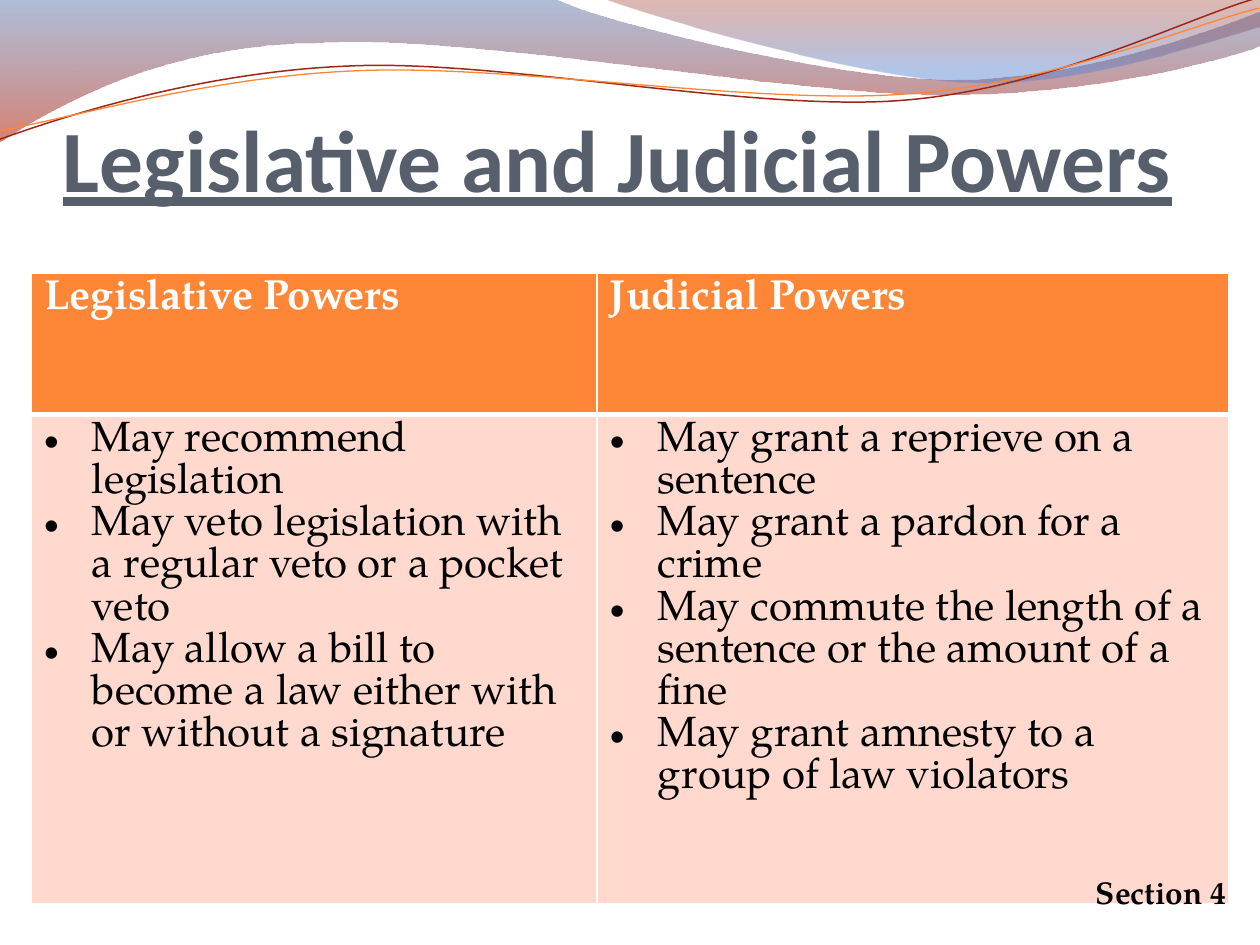
from lxml import etree
from pptx import Presentation
from pptx import util as u
from pptx.dml.color import RGBColor
from pptx.enum import text
from pptx.oxml import ns

SERIF = "TeX Gyre Pagella"

deck = Presentation()
deck.slide_width, deck.slide_height = u.Inches(10), u.Inches(7.5)
wide, high = deck.slide_width, deck.slide_height
slide = deck.slides.add_slide(deck.slide_layouts[6])
rgb = RGBColor.from_string


def style(para, size, color, face=SERIF, bold=True):
    for run in para.runs:
        font = run.font
        font.size, font.name, font.bold = u.Pt(size), face, bold
        font.color.rgb = rgb(color)


def trace(start, parts, close):
    """Draw a freeform in inches; a part of one point is a line, of three a cubic curve."""
    pen = slide.shapes.build_freeform(u.Inches(start[0]), u.Inches(start[1]), scale=1.0)
    dots = [(u.Inches(x), u.Inches(y)) for part in parts for x, y in part]
    pen.add_line_segments(dots, close=close)
    shape = pen.convert_to_shape()
    shape.shadow.inherit = False
    lines = iter(list(shape._element.iter(ns.qn("a:lnTo"))))
    for part in parts:
        group = [next(lines) for dot in part]
        if len(group) == 3:
            curve = etree.Element(ns.qn("a:cubicBezTo"))
            group[0].addprevious(curve)
            for line in group:
                curve.append(line[0])
                line.getparent().remove(line)
    return shape


# Waves across the top: start, parts, then stops as (position, colour, opacity in %)
waves = [
    ((0, -0.01), [
        [(4.4, -0.01)],
        [(4.76, 0.17), (6.64, 0.63), (7.58, 0.63)],
        [(8.53, 0.63), (9.58, 0.26), (10, 0.09)],
        [(10.01, 0.36)],
        [(9.83, 0.44), (8.7, 0.76), (7.46, 0.75)],
        [(6.22, 0.75), (3.82, 0.28), (2.57, 0.34)],
        [(1.29, 0.35), (0.46, 0.83), (-0.01, 1.13)],
    ], [(0, "4F6EA8", 45), (1, "B61A00", 55)]),
    ((4.79, -0.01), [
        [(5.09, 0.11), (6.82, 0.62), (7.69, 0.65)],
        [(8.56, 0.69), (9.61, 0.32), (10, 0.21)],
        [(10, 0)],
    ], [(0, "951500", 30), (0.8, "5681D1", 45)]),
]
for start, parts, stops in waves:
    wave = trace(start, parts, True)
    wave.line.fill.background()
    wave.fill.gradient()
    wave.fill.gradient_angle = 270
    for stop, (place, color, alpha) in zip(wave.fill.gradient_stops, stops):
        stop.position = place
        stop.color.rgb = rgb(color)
    tones = wave.fill._xPr.iter(ns.qn("a:srgbClr"))
    for tone, (place, color, alpha) in zip(tones, stops):
        etree.SubElement(tone, ns.qn("a:alpha"), val=str(alpha * 1000))

# Thin threads, tilted as a whole
threads = [
    ((-0.02, 0.87), [
        [(0.47, 0.72), (1.58, 0.41), (2.78, 0.42)],
        [(3.96, 0.42), (5.92, 0.93), (7.12, 0.9)],
        [(8.32, 0.87), (9.4, 0.36), (10, 0.22)],
    ], "9E2713", 0.85),
    ((-0.02, 0.8), [
        [(0.46, 0.75), (1.64, 0.45), (2.83, 0.46)],
        [(4.03, 0.46), (5.96, 0.88), (7.16, 0.85)],
        [(8.35, 0.83), (9.42, 0.42), (10.01, 0.3)],
    ], "FE8637", 0.75),
]
for start, parts, color, width in threads:
    thread = trace(start, parts, False)
    thread.rotation = 357.3
    thread.fill.background()
    thread.line.color.rgb = rgb(color)
    thread.line.width = u.Pt(width)

# Title
title = slide.shapes.add_textbox(wide // 20, u.Inches(0.77), wide * 9 // 10, u.Inches(0.9))
frame = title.text_frame
frame.word_wrap = True
frame.vertical_anchor = text.MSO_ANCHOR.BOTTOM
frame.margin_left = frame.margin_right = frame.margin_bottom = 0
frame.text = "Legislative and Judicial Powers"
style(frame.paragraphs[0], 50, "575F6D", "Calibri")
frame.paragraphs[0].runs[0].font.underline = True

# Table of powers
powers = {
    "Legislative Powers": [
        "May recommend legislation",
        "May veto legislation with a regular veto or a pocket veto",
        "May allow a bill to become a law either with or without a signature",
    ],
    "Judicial Powers": [
        "May grant a reprieve on a sentence",
        "May grant a pardon for a crime",
        "May commute the length of a sentence or the amount of a fine",
        "May grant amnesty to a group of law violators",
    ],
}
table = slide.shapes.add_table(2, 2, wide // 40, u.Inches(2.17),
                               wide * 19 // 20, high * 2 // 3).table
table.horz_banding = False
for row, size in zip(table.rows, (1.12, 3.88)):
    row.height = u.Inches(size)
for col, size in zip(table.columns, (4.49, 5.01)):
    col.width = u.Inches(size)

for col, (name, items) in enumerate(powers.items()):
    head, body = table.cell(0, col), table.cell(1, col)
    for cell, color, thick in ((head, "FE8637", "lnB"), (body, "FFD9CE", "lnT")):
        props = cell._tc.get_or_add_tcPr()
        for side in ("lnL", "lnR", "lnT", "lnB"):
            width = u.Pt(3 if side == thick else 1)
            edge = etree.SubElement(props, ns.qn("a:" + side), w=str(width))
            paint = etree.SubElement(edge, ns.qn("a:solidFill"))
            etree.SubElement(paint, ns.qn("a:srgbClr"), val="FFFFFF")
        cell.fill.solid()
        cell.fill.fore_color.rgb = rgb(color)
    head.text_frame.text = name
    style(head.text_frame.paragraphs[0], 24, "FFFFFF")
    body.text_frame.text = "\n".join(items)
    for para in body.text_frame.paragraphs:
        style(para, 24, "000000", bold=False)
        props = para._p.get_or_add_pPr()
        props.set("marL", str(u.Inches(0.38)))
        props.set("indent", str(-u.Inches(0.38)))
        etree.SubElement(props, ns.qn("a:buFont"), typeface="Arial")
        etree.SubElement(props, ns.qn("a:buChar"), char="•")

# Section mark
mark = slide.shapes.add_textbox(u.Inches(8.25), u.Inches(6.88), u.Inches(1.58), u.Inches(0.4))
frame = mark.text_frame
frame.word_wrap = True
frame.auto_size = text.MSO_AUTO_SIZE.SHAPE_TO_FIT_TEXT
frame.text = "Section 4"
frame.paragraphs[0].alignment = text.PP_ALIGN.RIGHT
style(frame.paragraphs[0], 18, "000000")

deck.save("out.pptx")
